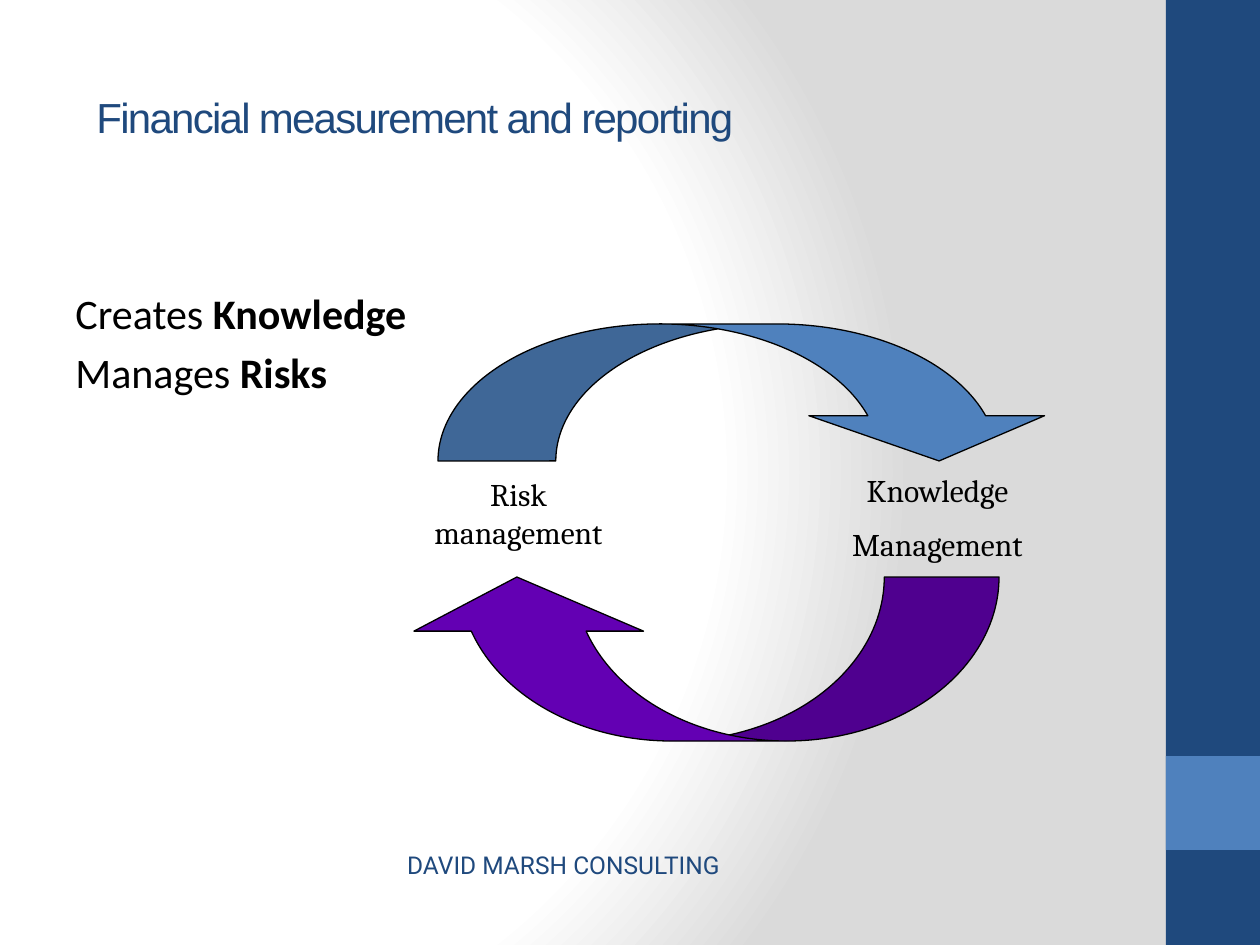
from lxml import etree
from pptx import Presentation
from pptx.dml.color import RGBColor
from pptx.enum.shapes import MSO_SHAPE as Shape
from pptx.enum.text import MSO_ANCHOR as Anchor, PP_ALIGN as Align
from pptx.oxml.ns import qn
from pptx.util import Emu, Pt

NAVY = RGBColor(0x1F, 0x49, 0x7D)
BLUE = RGBColor(0x4F, 0x81, 0xBD)
PURPLE = RGBColor(0x63, 0x00, 0xB3)
BLACK = RGBColor(0, 0, 0)
WHITE = RGBColor(0xFF, 0xFF, 0xFF)
GREY = RGBColor(0xDA, 0xDA, 0xDA)

# Content: boxes are left, top, width, height in px
SIDE_BARS = [((1166, 0, 94, 945), NAVY), ((1166, 756, 94, 94), BLUE)]
BACKGROUND_STOPS = [(0, WHITE), (75, WHITE), (100, GREY)]
BACKGROUND_CENTRE = {"l": 20, "t": 50, "r": 100, "b": 50}

# Each paragraph is a list of (text, bold) runs
TITLE = [[("Financial measurement and reporting", False)]]
BODY = [
    [("Creates ", False), ("Knowledge", True)],
    [("Manages ", False), ("Risks", True)],
]
FOOTER = [[("DAVID MARSH CONSULTING", False)]]
LABELS = [
    ((408, 469, 221, 89), [[("Risk management", False)]]),
    ((827, 465, 221, 108), [[("Knowledge", False)], [("Management", False)]]),
]
# Box, colour, rotation, adjustments
ARROWS = [
    ((438, 324, 619, 137), BLUE, 0, (0.86, 1.72, 0.33)),
    ((402, 577, 597, 164), PURPLE, 180, (0.7, 1.4, 0.33)),
]


def px(value):
    return Emu(round(value * 914400 / 126))


def set_background(slide):
    properties = slide.background.fill._xPr
    for child in list(properties):
        properties.remove(child)
    gradient = etree.SubElement(properties, qn("a:gradFill"), rotWithShape="1")
    stops = etree.SubElement(gradient, qn("a:gsLst"))
    for position, color in BACKGROUND_STOPS:
        stop = etree.SubElement(stops, qn("a:gs"), pos=str(position * 1000))
        etree.SubElement(stop, qn("a:srgbClr"), val=str(color))
    circle = etree.SubElement(gradient, qn("a:path"))
    circle.set("path", "circle")
    centre = etree.SubElement(circle, qn("a:fillToRect"))
    for side, percent in BACKGROUND_CENTRE.items():
        centre.set(side, str(percent * 1000))
    etree.SubElement(properties, qn("a:effectLst"))


def add_filled(slide, kind, box, color):
    shape = slide.shapes.add_shape(kind, *map(px, box))
    shape.shadow.inherit = False
    shape.fill.solid()
    shape.fill.fore_color.rgb = color
    shape.line.fill.background()
    return shape


def add_text(slide, box, paragraphs, font, size, color=BLACK,
             align=Align.LEFT, anchor=Anchor.TOP, gap=0, spacing=0):
    frame = slide.shapes.add_textbox(*map(px, box)).text_frame
    frame.word_wrap = True
    frame.vertical_anchor = anchor
    for index, runs in enumerate(paragraphs):
        paragraph = frame.add_paragraph() if index else frame.paragraphs[0]
        paragraph.alignment = align
        paragraph.space_before = Pt(gap if index else 0)
        for text, bold in runs:
            run = paragraph.add_run()
            run.text = text
            run.font.name = font
            run.font.size = Pt(size)
            run.font.bold = bold
            run.font.color.rgb = color
            if spacing:
                run.font._element.set("spc", str(spacing * 100))


def main():
    presentation = Presentation()
    presentation.slide_width, presentation.slide_height = px(1260), px(945)
    slide = presentation.slides.add_slide(presentation.slide_layouts[6])
    set_background(slide)

    # Side bars
    for box, color in SIDE_BARS:
        add_filled(slide, Shape.RECTANGLE, box, color)

    # Title and body
    add_text(slide, (84, 38, 1113, 158), TITLE, "Arial", 24, NAVY,
             anchor=Anchor.MIDDLE, spacing=-1)
    add_text(slide, (63, 281, 1050, 601), BODY, "Calibri", 24, gap=4.8)

    # Cycle: labels and arrows
    for box, paragraphs in LABELS:
        add_text(slide, box, paragraphs, "Cambria", 18,
                 align=Align.CENTER, gap=9)
    for box, color, rotation, adjustments in ARROWS:
        arrow = add_filled(slide, Shape.CURVED_DOWN_ARROW, box, color)
        arrow.rotation = rotation
        arrow.line.color.rgb = BLACK
        arrow.line.width = Pt(0.75)
        for index, value in enumerate(adjustments):
            arrow.adjustments[index] = value

    # Footer
    add_text(slide, (360, 844, 407, 43), FOOTER, "Roboto", 14, NAVY,
             align=Align.CENTER)

    presentation.save("out.pptx")


if __name__ == "__main__":
    main()
